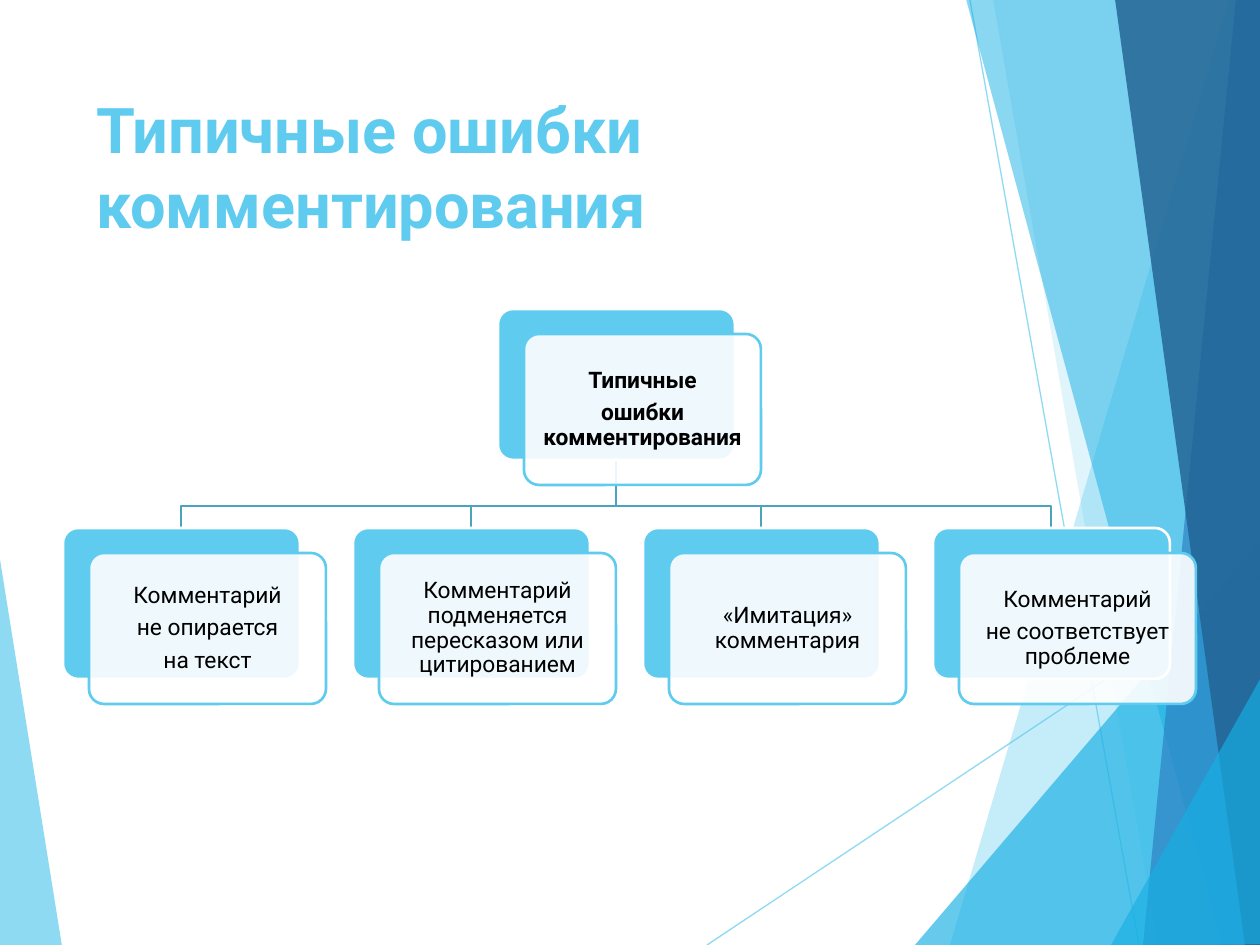
from lxml.etree import SubElement
from pptx import Presentation
from pptx.dml.color import RGBColor
from pptx.enum.shapes import MSO_CONNECTOR as CONNECTOR, MSO_SHAPE as SHAPE
from pptx.enum.text import MSO_ANCHOR as ANCHOR, PP_ALIGN as ALIGN
from pptx.oxml.ns import qn
from pptx.util import Pt

PX = 914400 / 126
FONT = "Roboto"
SKY, AZURE, BLUE, NAVY = "5FCBEF", "17B0E4", "2E83C3", "226292"
BRANCH, WHITE, BLACK = "4CA3BF", "FFFFFF", "000000"
CARD_W, CARD_H, CARD_DX, CARD_DY = 237, 151, 26, 25
CARD_PITCH, LEVEL_DROP, BEND_RISE = 290, 219, 22

RAYS = [((707, 945), (1261, 576)), ((970, 0), (1139, 945))]
LEFT_SHARD = ([(-1, 553), (62, 946), (-1, 945)], SKY, 70)
RIGHT_SHARDS = [
    ([(1229, 0), (950, 945), (1263, 946), (1261, 1)], SKY, 36),
    ([(993, -1), (1158, 945), (1261, 945), (1261, -1)], SKY, 20),
    ([(915, 945), (1260, 541), (1261, 945)], AZURE, 66),
    ([(966, -1), (1222, 945), (1261, 944), (1261, -1)], AZURE, 50),
    ([(1236, -1), (1143, 945), (1261, 945), (1260, -1)], BLUE, 70),
    ([(1115, -1), (1245, 945), (1263, 945), (1260, -1)], NAVY, 82),
    ([(1111, 945), (1263, 674), (1263, 944)], AZURE, 66),
]
ROOT = ["Типичные", "ошибки комментирования"]
MISTAKES = [
    ["Комментарий", "не опирается", "на текст"],
    ["Комментарий подменяется пересказом или цитированием"],
    ["«Имитация» комментария"],
    ["Комментарий", "не соответствует проблеме"],
]


def emu(*lengths):
    return [round(length * PX) for length in lengths]


def paint(fill, color, opacity=100):
    fill.solid()
    fill.fore_color.rgb = RGBColor.from_string(color)
    if opacity < 100:
        srgb = next(fill._xPr.iter(qn("a:srgbClr")))
        SubElement(srgb, qn("a:alpha")).set("val", str(opacity * 1000))


def outline(line, color, width, opacity=100):
    line.width = Pt(width)
    paint(line.fill, color, opacity)


def add_path(slide, points, closed):
    (x, y), *rest = points
    builder = slide.shapes.build_freeform(x, y, scale=PX)
    builder.add_line_segments(rest, close=closed)
    path = builder.convert_to_shape()
    path.shadow.inherit = False
    return path


def add_shard(slide, points, color, opacity):
    shard = add_path(slide, points, True)
    paint(shard.fill, color, opacity)
    shard.line.fill.background()


def add_backdrop(slide, x, y):
    def shift(points):
        return [(x + px, y + py) for px, py in points]

    points, color, opacity = LEFT_SHARD
    add_shard(slide, shift(points), color, opacity)
    for points in RAYS:
        start, end = shift(points)
        ray = slide.shapes.add_connector(CONNECTOR.STRAIGHT, *emu(*start, *end))
        outline(ray.line, SKY, 0.75, 70)
        SubElement(ray._element.spPr, qn("a:effectLst"))
    for points, color, opacity in RIGHT_SHARDS:
        add_shard(slide, shift(points), color, opacity)


def style_run(run, size, color, bold):
    run.font.name, run.font.size, run.font.bold = FONT, Pt(size), bold
    run.font.color.rgb = RGBColor.from_string(color)


def add_title(slide, x, y, w, h):
    title = slide.shapes.add_textbox(*emu(x, y, w, h)).text_frame
    title.word_wrap = True
    title.text = "Типичные ошибки комментирования"
    style_run(title.paragraphs[0].runs[0], 36, SKY, True)


def add_plate(slide, x, y, fill, opacity, border):
    plate = slide.shapes.add_shape(SHAPE.ROUNDED_RECTANGLE, *emu(x, y, CARD_W, CARD_H))
    plate.adjustments[0] = 0.1
    plate.shadow.inherit = False
    paint(plate.fill, fill, opacity)
    outline(plate.line, border, 1.5)
    return plate


def add_card(slide, x, y, lines, bold=False):
    add_plate(slide, x, y, SKY, 100, WHITE)
    front = add_plate(slide, x + CARD_DX, y + CARD_DY, WHITE, 90, SKY)
    label = front.text_frame
    label.word_wrap = True
    label.vertical_anchor = ANCHOR.MIDDLE
    inset, = emu(6)
    label.margin_left = label.margin_right = inset
    label.margin_top = label.margin_bottom = inset
    label.text = "\n".join(lines)
    for paragraph in label.paragraphs:
        paragraph.alignment = ALIGN.CENTER
        paragraph.line_spacing = 0.9
        paragraph.space_after = Pt(4.55)
        style_run(paragraph.runs[0], 13, BLACK, bold)


def add_branch(slide, start, end):
    bend = end[1] - BEND_RISE
    branch = add_path(slide, [start, (start[0], bend), (end[0], bend), end], False)
    branch.fill.background()
    outline(branch.line, BRANCH, 1.5)


def add_hierarchy(slide, x, y):
    lefts = [x + i * CARD_PITCH for i in range(len(MISTAKES))]
    root_left = (lefts[0] + lefts[-1]) // 2
    child_top = y + LEVEL_DROP
    middle = CARD_W // 2
    for left in reversed(lefts):
        add_branch(slide, (root_left + middle, y + CARD_H), (left + middle, child_top))
    add_card(slide, root_left, y, ROOT, True)
    for left, lines in zip(lefts, MISTAKES):
        add_card(slide, left, child_top, lines)


def main():
    deck = Presentation()
    deck.slide_width, deck.slide_height = emu(1260, 945)
    slide = deck.slides.add_slide(deck.slide_layouts[6])
    paint(slide.background.fill, WHITE)
    add_backdrop(slide, 0, 0)
    add_title(slide, 84, 84, 874, 181)
    add_hierarchy(slide, 63, 309)
    deck.save("out.pptx")


if __name__ == "__main__":
    main()
